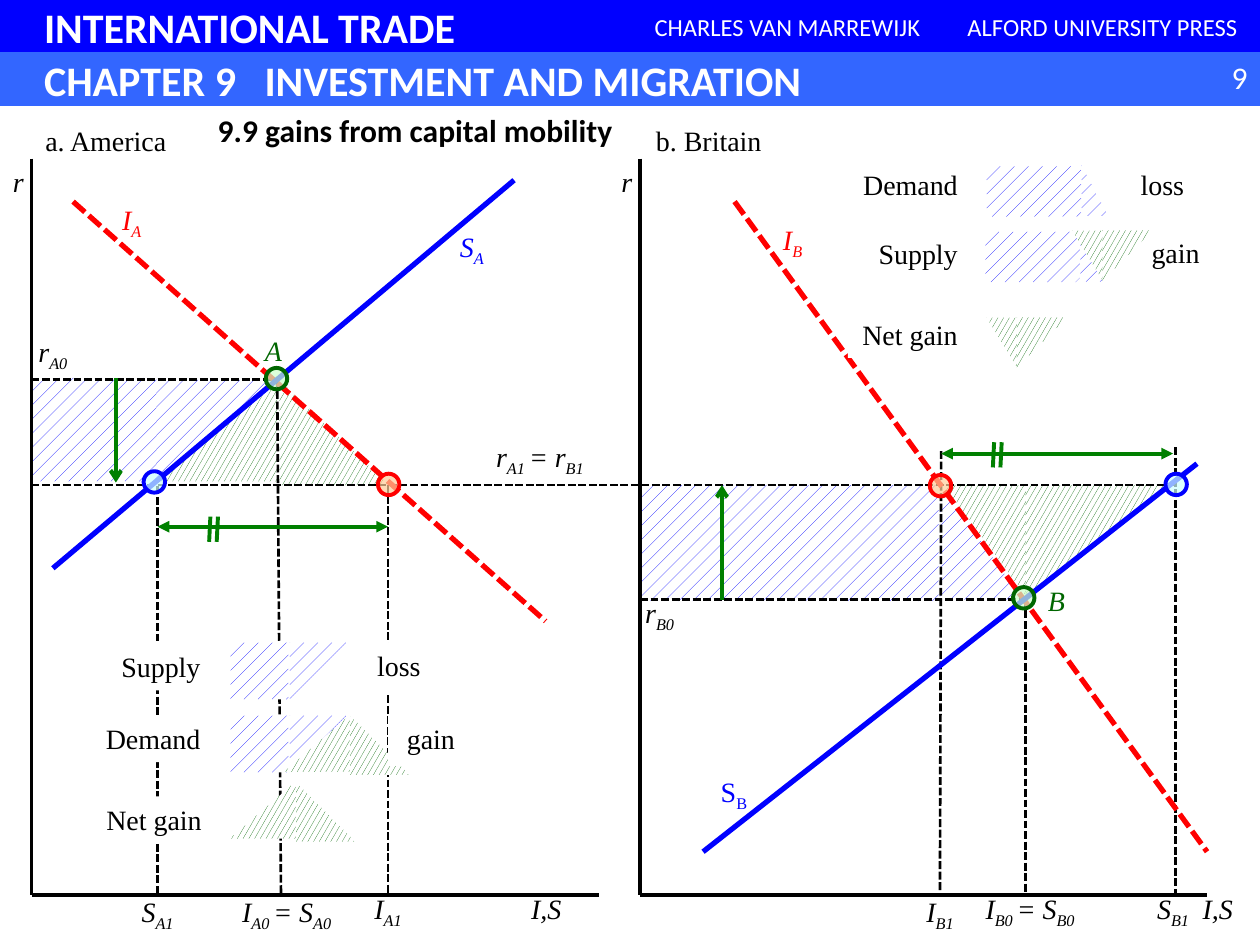
from lxml import etree
from pptx import Presentation
from pptx import util as u
from pptx.dml.color import RGBColor
from pptx.enum import dml, shapes, text
from pptx.oxml import ns

COLUMNS, ROWS = 1000, 750
WIDTH, HEIGHT = u.Inches(10), u.Inches(7.5)
BLACK, WHITE, BLUE, RED = "000000", "FFFFFF", "0000FF", "FF0000"
GREEN, DARK_GREEN, LIGHT_BLUE = "008000", "006600", "3366FF"
LEFT, CENTER, RIGHT = text.PP_ALIGN.LEFT, text.PP_ALIGN.CENTER, text.PP_ALIGN.RIGHT
TRIANGLE, RECTANGLE = shapes.MSO_SHAPE.RIGHT_TRIANGLE, shapes.MSO_SHAPE.RECTANGLE
GAIN = (dml.MSO_PATTERN.LARGE_CONFETTI, DARK_GREEN)
LOSS = (dml.MSO_PATTERN.PERCENT_10, BLUE)


def column(count):
    return round(WIDTH * count / COLUMNS)


def row(count):
    return round(HEIGHT * count / ROWS)


def place(left, top, width, height):
    return column(left), row(top), column(width), row(height)


def color(value):
    return RGBColor.from_string(value)


def apply(target, values):
    for name, value in values.items():
        setattr(target, name, value)


def child(parent, tag, **attributes):
    return etree.SubElement(parent, ns.qn(tag), attributes)


def add_shape(slide, kind, box, fill=None, outline=None, weight=0.75):
    shape = slide.shapes.add_shape(kind, *place(*box))
    shape.shadow.inherit = False
    if fill:
        shape.fill.solid()
        shape.fill.fore_color.rgb = color(fill)
    if outline:
        shape.line.color.rgb = color(outline)
        shape.line.width = u.Pt(weight)
    else:
        shape.line.fill.background()
    return shape


def write(shape, content, align=CENTER, ink=BLACK, size=16, font="Times New Roman", **style):
    paragraph = shape.text_frame.paragraphs[0]
    paragraph.alignment = align
    for index, part in enumerate(content.split("|")):
        run = paragraph.add_run()
        run.text = part
        apply(run.font, {"name": font, "size": u.Pt(size), **style})
        run.font.color.rgb = color(ink)
        if index % 2:
            run.font._element.set("baseline", "-25000")
    return paragraph


def add_label(slide, left, top, width, content, height=37, fill=None, **style):
    box = (left, top, width, height)
    if fill:
        shape = add_shape(slide, RECTANGLE, box, fill)
    else:
        shape = slide.shapes.add_textbox(*place(*box))
    apply(shape.text_frame, {"word_wrap": False, "vertical_anchor": text.MSO_ANCHOR.TOP})
    write(shape, content, **style)


def add_banner(slide, box, fill, content, size=14, align=CENTER, inset=10, **style):
    shape = add_shape(slide, RECTANGLE, box, fill, fill)
    apply(shape.text_frame, {"word_wrap": True, "margin_left": column(inset),
                             "vertical_anchor": text.MSO_ANCHOR.MIDDLE})
    return write(shape, content, align, WHITE, size, "Calibri", **style)


def add_line(slide, start, end, ink=BLACK, weight=2.25, dashed=False, head=None, tail=None):
    points = column(start[0]), row(start[1]), column(end[0]), row(end[1])
    line = slide.shapes.add_connector(shapes.MSO_CONNECTOR.STRAIGHT, *points)
    line.line.color.rgb = color(ink)
    line.line.width = u.Pt(weight)
    if dashed:
        line.line.dash_style = dml.MSO_LINE.SQUARE_DOT
    properties = line._element.spPr
    outline = properties.find(ns.qn("a:ln"))
    for tag, kind in (("a:headEnd", head), ("a:tailEnd", tail)):
        if kind:
            child(outline, tag, type=kind)
    child(properties, "a:effectLst")


def add_areas(slide, pattern, parts, flipped=False, shift=(0, 0)):
    for kind, (left, top, width, height), rotation in parts:
        area = add_shape(slide, kind, (left + shift[0], top + shift[1], width, height))
        area.rotation = rotation
        area.fill.patterned()
        area.fill.pattern = pattern[0]
        area.fill.fore_color.rgb = color(pattern[1])
        area.fill.back_color.rgb = color(WHITE)
        if flipped:
            area._element.spPr.xfrm.set("flipV", "1")


def add_equilibrium(slide, left, top, fill, outline):
    circle = add_shape(slide, shapes.MSO_SHAPE.OVAL, (left, top, 17, 17), fill, outline, 2.25)
    child(circle._element.spPr.find(".//" + ns.qn("a:srgbClr")), "a:alpha", val="70000")


def add_flow(slide, left, right, level, ticks, tick_top):
    add_line(slide, (left, level), (right, level), GREEN, head="triangle", tail="triangle")
    for tick in ticks:
        add_line(slide, (tick, tick_top), (tick - 1, tick_top + 20), GREEN)


def add_header(slide):
    add_banner(slide, (0, 0, 1000, 42), BLUE, "INTERNATIONAL TRADE", 24, LEFT, 35, bold=True)
    add_banner(slide, (500, 0, 250, 42), BLUE, "CHARLES VAN MARREWIJK")
    add_banner(slide, (750, 0, 250, 42), BLUE, "ALFORD UNIVERSITY PRESS")
    chapter = add_banner(slide, (0, 42, 1000, 42), LIGHT_BLUE,
                         "CHAPTER 9\tINVESTMENT AND MIGRATION", 24, LEFT, 35, bold=True)
    stops = child(chapter._element.get_or_add_pPr(), "a:tabLst")
    child(stops, "a:tab", pos=str(column(175)), algn="l")
    add_label(slide, 933, 41, 67, "9", 40, align=RIGHT, ink=WHITE, size=18, font="Calibri")
    add_label(slide, 163, 83, 336, "9.9 gains from capital mobility", 40,
              align=LEFT, size=18, font="Calibri", bold=True)


def add_welfare_areas(slide):
    add_areas(slide, GAIN, [(TRIANGLE, (737, 397, 92, 68), 90),
                            (TRIANGLE, (814, 385, 111, 90), 0)], True)
    add_areas(slide, LOSS, [(TRIANGLE, (733, 397, 92, 66), 270),
                            (RECTANGLE, (508, 385, 237, 92), 0)], True)
    add_areas(slide, GAIN, [(TRIANGLE, (132, 294, 80, 96), 270),
                            (TRIANGLE, (222, 302, 87, 83), 0)])
    add_areas(slide, LOSS, [(TRIANGLE, (131, 294, 83, 98), 90),
                            (RECTANGLE, (25, 300, 99, 82), 0)])


def add_curves(slide):
    guides = [((220, 302), (223, 709)), ((814, 476), (814, 710)), ((308, 385), (308, 709)),
              ((747, 358), (746, 707)), ((933, 355), (933, 709)), ((125, 386), (125, 710)),
              ((508, 476), (812, 476)), ((25, 301), (219, 301)), ((25, 385), (933, 385))]
    for start, end in guides:
        add_line(slide, start, end, weight=1.5, dashed=True)
    for origin in (25, 508):
        add_line(slide, (origin, 126), (origin, 710))
        add_line(slide, (origin, 710), (origin + 450, 710))
    for start, end in [((58, 160), (433, 493)), ((583, 160), (958, 676))]:
        add_line(slide, start, end, RED, 3, dashed=True)
    for start, end in [((42, 451), (408, 143)), ((558, 676), (950, 368))]:
        add_line(slide, start, end, BLUE, 3)
    for fill, outline, spots in [("CCFFCC", DARK_GREEN, [(211, 292), (804, 466)]),
                                 ("CCFFFF", BLUE, [(925, 376), (114, 374)]),
                                 ("FFCC99", RED, [(738, 377), (300, 376)])]:
        for left, top in spots:
            add_equilibrium(slide, left, top, fill, outline)


def add_labels(slide):
    add_label(slide, 25, 93, 118, "a. America")
    add_label(slide, 510, 93, 105, "b. Britain")
    add_label(slide, 561, 610, 43, "S|B", ink=BLUE)
    symbols = [
        (86, 156, 37, "I|A", RED), (610, 172, 38, "I|B", RED), (354, 177, 41, "S|A", BLUE),
        (0, 126, 29, "r", BLACK), (483, 126, 29, "r", BLACK),
        (411, 703, 45, "I,S", BLACK), (944, 703, 45, "I,S", BLACK),
        (178, 705, 99, "I|A0 |= S|A0", BLACK), (769, 703, 97, "I|B0 |= S|B0", BLACK),
        (19, 261, 46, "r|A0", BLACK), (501, 468, 45, "r|B0", BLACK),
        (381, 344, 95, "r|A1 |= r|B1", BLACK),
        (200, 260, 34, "A", DARK_GREEN), (821, 458, 35, "B", DARK_GREEN),
        (286, 703, 44, "I|A1", BLACK), (101, 705, 48, "S|A1", BLACK),
        (724, 705, 44, "I|B1", BLACK), (907, 703, 48, "S|B1", BLACK)]
    for left, top, width, content, ink in symbols:
        add_label(slide, left, top, width, content, ink=ink, italic=True)


def add_legend_text(slide, entries, results):
    for left, top, width, content in entries:
        add_label(slide, left, top, width, content, fill=WHITE, align=RIGHT)
    for left, top, width, content in results:
        add_label(slide, left, top, width, content, 40, WHITE)


def add_legends(slide):
    for shift in ((0, 0), (0, 58)):
        add_areas(slide, LOSS, [(TRIANGLE, (230, 510, 45, 45), 90),
                                (RECTANGLE, (183, 510, 46, 45), 0)], shift=shift)
    for shift in ((0, 0), (-43, 53)):
        add_areas(slide, GAIN, [(TRIANGLE, (229, 564, 45, 52), 270),
                                (TRIANGLE, (278, 568, 47, 47), 0)], shift=shift)
    add_legend_text(slide, [(85, 511, 84, "Supply"), (73, 568, 96, "Demand"),
                            (73, 632, 97, "Net gain")],
                    [(284, 510, 65, "loss"), (308, 568, 68, "gain")])
    add_legend_text(slide, [(686, 183, 84, "Supply"), (674, 128, 96, "Demand"),
                            (673, 247, 97, "Net gain")],
                    [(890, 128, 65, "loss"), (899, 182, 68, "gain")])
    for shift in ((0, 0), (-1, 52)):
        add_areas(slide, LOSS, [(TRIANGLE, (849, 141, 40, 21), 270),
                                (RECTANGLE, (783, 132, 75, 40), 0)], True, shift)
    for shift in ((0, 0), (-68, 69)):
        add_areas(slide, GAIN, [(TRIANGLE, (843, 191, 41, 25), 90),
                                (TRIANGLE, (875, 183, 40, 40), 0)], True, shift)


def main():
    presentation = Presentation()
    apply(presentation, {"slide_width": WIDTH, "slide_height": HEIGHT})
    slide = presentation.slides.add_slide(presentation.slide_layouts[6])
    add_header(slide)
    add_welfare_areas(slide)
    add_curves(slide)
    add_flow(slide, 125, 308, 418, (173, 167), 410)
    add_flow(slide, 747, 931, 360, (795, 789), 351)
    add_legends(slide)
    add_line(slide, (92, 300), (92, 383), GREEN, tail="arrow")
    add_line(slide, (573, 476), (573, 385), GREEN, tail="arrow")
    add_labels(slide)
    presentation.save("out.pptx")


if __name__ == "__main__":
    main()
